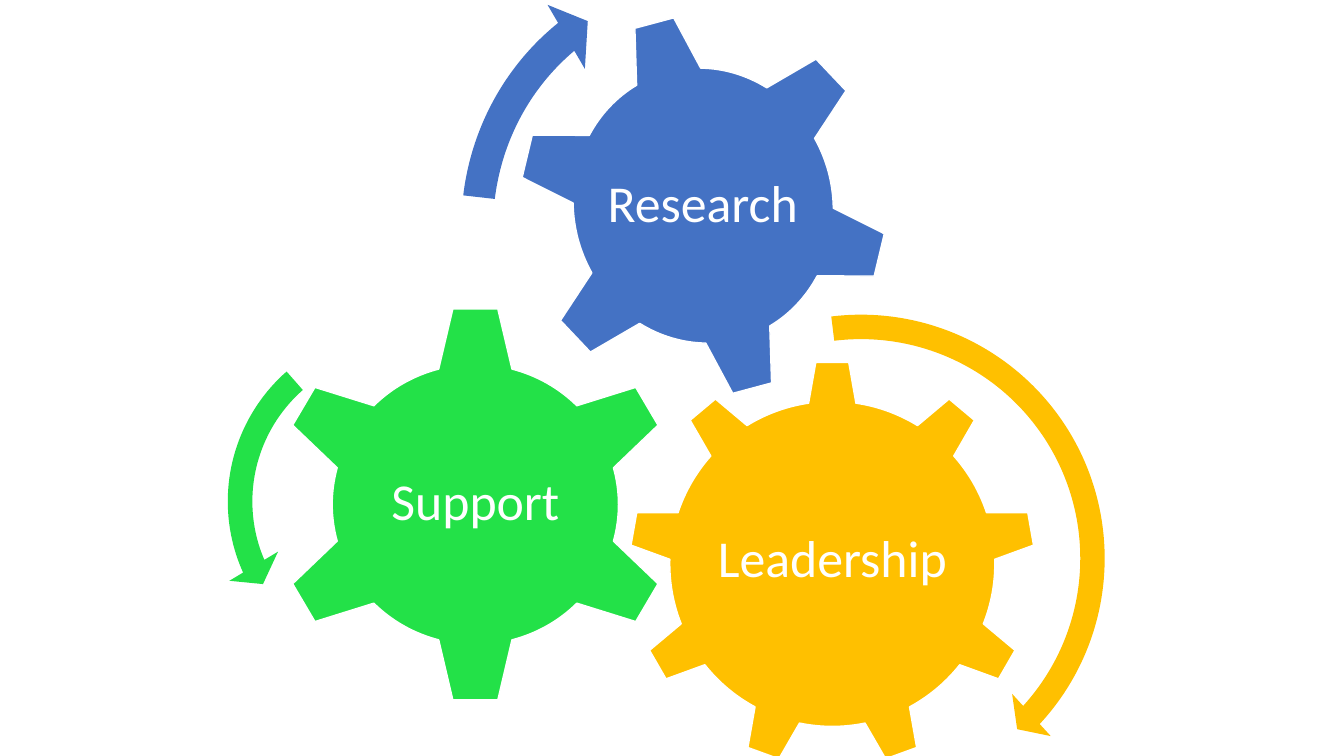
from dataclasses import dataclass

from pptx import Presentation
from pptx.dml.color import RGBColor
from pptx.enum.shapes import MSO_SHAPE
from pptx.enum.text import MSO_ANCHOR, PP_ALIGN
from pptx.util import Emu, Pt

EMU_PER_PX = 9144  # 100 px to the inch
COLORS = {"white": "FFFFFF", "gold": "FFC000", "green": "23E148", "blue": "4472C4"}


@dataclass(frozen=True)
class Box:
    left: int
    top: int
    width: int
    height: int

    def emu(self) -> tuple:
        sides = (self.left, self.top, self.width, self.height)
        return tuple(px(side) for side in sides)


@dataclass(frozen=True)
class Gear:
    kind: MSO_SHAPE
    box: Box
    color: str
    label: str
    label_box: Box
    rotation: float = 0


@dataclass(frozen=True)
class TurnArrow:
    """Thickness and head width are percentages; the angles are degrees."""
    kind: MSO_SHAPE
    box: Box
    color: str
    thickness: float
    head_angle: float
    end_angle: float
    start_angle: float
    head_width: float
    rotation: float = 0


GEARS = [
    Gear(MSO_SHAPE.GEAR_9, Box(624, 358, 403, 403), "gold",
         "Leadership", Box(705, 453, 241, 207)),
    Gear(MSO_SHAPE.GEAR_6, Box(270, 302, 403, 397), "green",
         "Support", Box(371, 402, 201, 196)),
    Gear(MSO_SHAPE.GEAR_6, Box(514, 12, 367, 384), "blue",
         "Research", Box(593, 98, 208, 213), rotation=345),
]
ARROWS = [
    TurnArrow(MSO_SHAPE.CIRCULAR_ARROW, Box(596, 296, 516, 516), "gold",
              4.7, 4.98, 42.59, 263, 5.5),
    TurnArrow(MSO_SHAPE.LEFT_CIRCULAR_ARROW, Box(210, 310, 375, 375), "green",
              6.5, 7.17, 174.82, 247.3, 7.5, rotation=341.4),
    TurnArrow(MSO_SHAPE.CIRCULAR_ARROW, Box(437, -52, 525, 546), "blue",
              6, 6.57, 221.9, 175.14, 7, rotation=11.3),
]


def px(length: int) -> Emu:
    return Emu(length * EMU_PER_PX)


def rgb(color: str) -> RGBColor:
    return RGBColor.from_string(COLORS[color])


def add_filled_shape(slide, kind: MSO_SHAPE, box: Box, color: str, rotation: float):
    shape = slide.shapes.add_shape(kind, *box.emu())
    shape.shadow.inherit = False
    shape.rotation = rotation
    shape.fill.solid()
    shape.fill.fore_color.rgb = rgb(color)
    return shape


def add_text(slide, text: str, box: Box, *, size: int = 37, color: str = "white",
             font: str = "Calibri", line_spacing: float = 0.9, inset: int = 5) -> None:
    frame = slide.shapes.add_textbox(*box.emu()).text_frame
    frame.word_wrap = True
    frame.vertical_anchor = MSO_ANCHOR.MIDDLE
    frame.margin_left = frame.margin_right = px(inset)
    frame.margin_top = frame.margin_bottom = px(inset)
    paragraph = frame.paragraphs[0]
    paragraph.alignment = PP_ALIGN.CENTER
    paragraph.line_spacing = line_spacing
    run = paragraph.add_run()
    run.text = text
    run.font.size = Pt(size)
    run.font.name = font
    run.font.color.rgb = rgb(color)


def add_gear(slide, gear: Gear) -> None:
    shape = add_filled_shape(slide, gear.kind, gear.box, gear.color, gear.rotation)
    shape.line.color.rgb = rgb("white")
    shape.line.width = Pt(1)
    add_text(slide, gear.label, gear.label_box)


def add_turn_arrow(slide, arrow: TurnArrow) -> None:
    shape = add_filled_shape(slide, arrow.kind, arrow.box, arrow.color, arrow.rotation)
    shape.line.fill.background()
    # Head angles of left-turning arrows are stored as negative values by default,
    # but a positive one is drawn the same way; one degree is 0.6 units.
    angles = (arrow.head_angle, arrow.end_angle, arrow.start_angle)
    values = (arrow.thickness / 100, *(angle * 0.6 for angle in angles),
              arrow.head_width / 100)
    for index, value in enumerate(values):
        shape.adjustments[index] = value


def main() -> None:
    presentation = Presentation()
    presentation.slide_width, presentation.slide_height = px(1333), px(750)
    slide = presentation.slides.add_slide(presentation.slide_layouts[6])
    for gear in GEARS:
        add_gear(slide, gear)
    for arrow in ARROWS:
        add_turn_arrow(slide, arrow)
    presentation.save("out.pptx")


if __name__ == "__main__":
    main()
